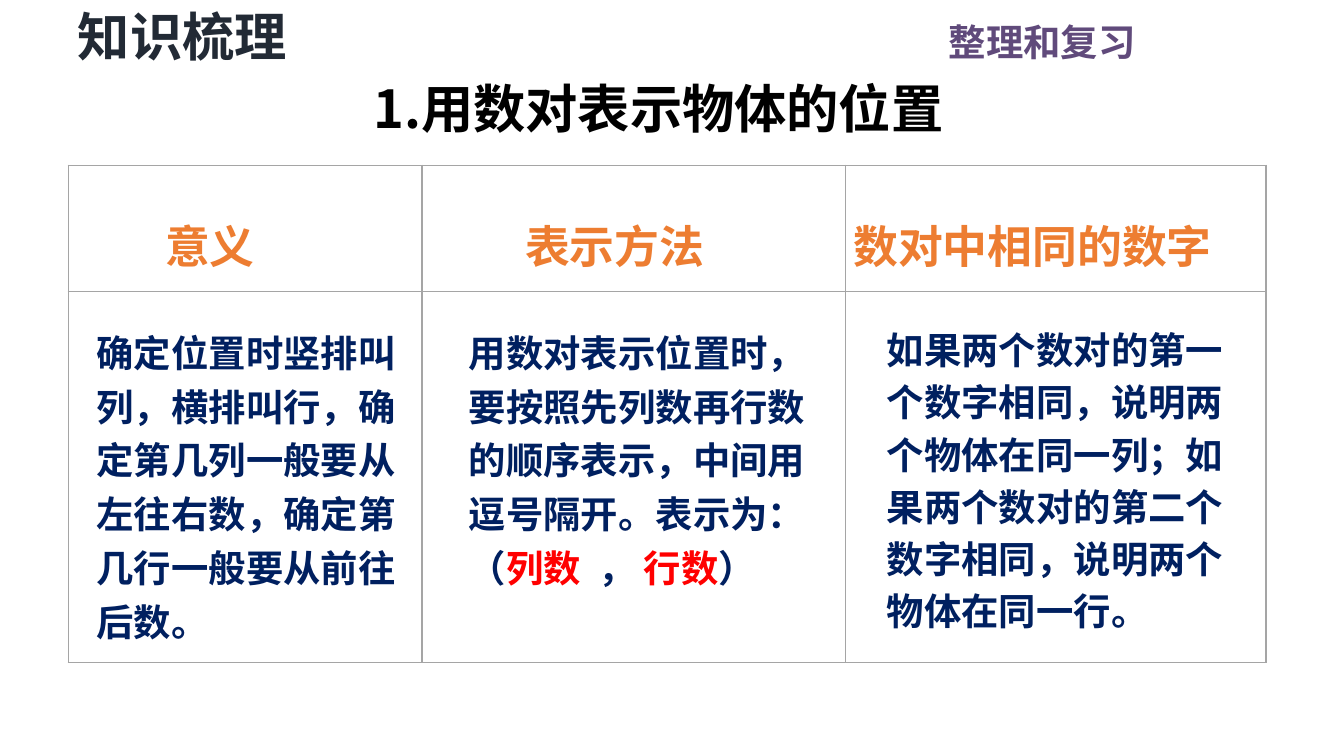
"""Build a review slide on giving positions with number pairs."""
from lxml import etree
from pptx import Presentation
from pptx.dml.color import RGBColor
from pptx.enum.text import PP_ALIGN
from pptx.oxml import parse_xml
from pptx.oxml.ns import nsdecls, qn
from pptx.util import Inches, Pt

LEFT, RIGHT = PP_ALIGN.LEFT, PP_ALIGN.RIGHT
FONT = "Noto Sans CJK SC"
COLORS = {
    "topic": "604A7B",
    "section": "222A35",
    "title": "000000",
    "head": "ED7D31",
    "body": "002060",
    "key": "FF0000",
    "border": "A5A5A5",
}

deck = Presentation()
deck.slide_width, deck.slide_height = Inches(10), Inches(10 * 9 / 16)
slide = deck.slides.add_slide(deck.slide_layouts[6])


def add_text(place, parts, size, inset=0.1, space=None, align=LEFT):
    box = slide.shapes.add_textbox(*[Inches(n) for n in place])
    frame = box.text_frame
    frame.word_wrap = True
    frame.margin_left = frame.margin_right = Inches(inset)
    frame.margin_top = frame.margin_bottom = Inches(inset / 2)
    para = frame.paragraphs[0]
    para.alignment = align
    para.line_spacing = space
    for text, color in parts:
        run = para.add_run()
        run.text = text
        font = run.font
        font.name, font.size, font.bold = FONT, Pt(size), True
        font.color.rgb = RGBColor.from_string(COLORS[color])
        east = etree.SubElement(run._r.get_or_add_rPr(), qn("a:ea"))
        east.set("typeface", FONT)


add_text((5.79, 0.09, 2.76, 0.44), [("整理和复习", "topic")], 20, align=RIGHT)
add_text((0.51, 0, 2.02, 0.55), [("知识梳理", "section")], 28, 0.07)
add_text((2.71, 0.53, 4.83, 0.55), [("1.用数对表示物体的位置", "title")], 28, 0.07)

widths, heights = (2.63, 3.15, 3.13), (0.94, 2.76)
grid = slide.shapes.add_table(
    2, 3, Inches(0.51), Inches(1.23), Inches(sum(widths)), Inches(sum(heights))
).table
for col, width in zip(grid.columns, widths):
    col.width = Inches(width)
for row, height in zip(grid.rows, heights):
    row.height = Inches(height)
for cell in grid.iter_cells():
    props = cell._tc.get_or_add_tcPr()
    for side in "LRTB":
        props.append(parse_xml(
            f'<a:ln{side} {nsdecls("a")} w="{Pt(1)}"><a:solidFill>'
            f'<a:srgbClr val="{COLORS["border"]}"/></a:solidFill></a:ln{side}>'
        ))
    cell.fill.background()

heads = [
    ("意义", 1.13, 1.1),
    ("表示方法", 3.81, 2.27),
    ("数对中相同的数字", 6.25, 3.29),
]
for text, left, width in heads:
    add_text((left, 1.38, width, 0.71), [(text, "head")], 24, space=1.5)

pair = [
    ("用数对表示位置时，要按照先列数再行数的顺序表示，中间用逗号隔开。表示为：（", "body"),
    ("列数", "key"),
    ("  ， ", "body"),
    ("行数", "key"),
    ("）", "body"),
]
sense = "确定位置时竖排叫列，横排叫行，确定第几列一般要从左往右数，确定第几行一般要从前往后数。"
same = "如果两个数对的第一个数字相同，说明两个物体在同一列；如果两个数对的第二个数字相同，说明两个物体在同一行。"
bodies = [
    ((0.62, 2.34, 2.66, 2.54), [(sense, "body")], 28.8),
    ((3.39, 2.34, 2.97, 2.13), pair, 28.8),
    ((6.5, 2.33, 2.9, 2.46), [(same, "body")], 28),
]
for place, parts, space in bodies:
    add_text(place, parts, 20, space=Pt(space))

deck.save("out.pptx")
